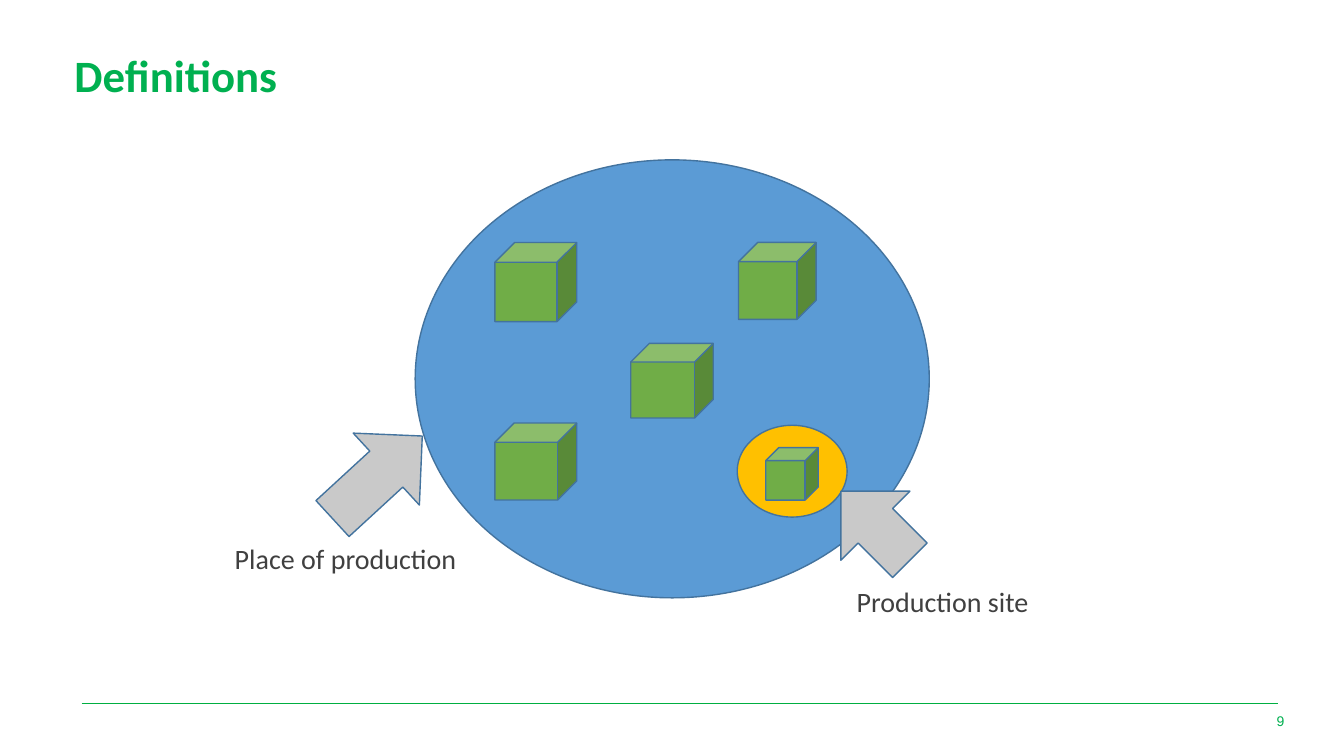
from dataclasses import dataclass

from lxml import etree
from pptx import Presentation
from pptx.dml.color import RGBColor
from pptx.enum.shapes import MSO_CONNECTOR, MSO_SHAPE
from pptx.enum.text import MSO_ANCHOR, PP_ALIGN
from pptx.oxml.ns import qn
from pptx.slide import Slide
from pptx.util import Pt

OVAL, CUBE, ARROW = MSO_SHAPE.OVAL, MSO_SHAPE.CUBE, MSO_SHAPE.UP_ARROW
STRAIGHT = MSO_CONNECTOR.STRAIGHT
TOP, MIDDLE = MSO_ANCHOR.TOP, MSO_ANCHOR.MIDDLE
LEFT, RIGHT = PP_ALIGN.LEFT, PP_ALIGN.RIGHT

BLUE, ORANGE, GREEN, GREY = "5B9BD5", "FFC000", "70AD47", "C9C9C9"
OUTLINE, RULE, ACCENT, DARK = "43739E", "00AF41", "00B050", "404040"


@dataclass
class Figure:
    kind: MSO_SHAPE
    x: float
    y: float
    w: float
    h: float
    fill: str
    rotation: float = 0


@dataclass
class Label:
    text: str
    x: float
    y: float
    w: float
    h: float
    size: float
    color: str
    font: str = "Calibri"
    bold: bool = False
    align: PP_ALIGN = LEFT
    anchor: MSO_ANCHOR = TOP
    spacing: float = 1.0


FIGURES = [
    Figure(OVAL, 296.6, 114.2, 367.2, 312.8, BLUE),
    Figure(OVAL, 526.6, 303.8, 78.5, 65.6, ORANGE),
    Figure(CUBE, 353.5, 173.2, 58.5, 56.5, GREEN),
    Figure(CUBE, 527.5, 173.2, 55.5, 55, GREEN),
    Figure(CUBE, 450.5, 245.3, 59, 53.3, GREEN),
    Figure(CUBE, 353.5, 302.2, 58.5, 55, GREEN),
    Figure(CUBE, 547, 319.7, 37.5, 37.5, GREEN),
    Figure(ARROW, 234.7, 297.4, 69.8, 87.1, GREY, 47.4),
    Figure(ARROW, 590.4, 340.6, 69.8, 69.8, GREY, 315),
]

LABELS = [
    Label("Definitions", 46.1, 36.7, 867.6, 38.2, 32, ACCENT,
          bold=True, anchor=MIDDLE, spacing=0.9),
    Label("9", 881.3, 500.4, 43.2, 28.8, 10, ACCENT,
          font="Arial", align=RIGHT, anchor=MIDDLE),
    Label("Place of production", 160.6, 383, 189.4, 31.7, 20, DARK),
    Label("Production site", 604.8, 414, 146.9, 31.7, 20, DARK),
]


def rgb(value: str) -> RGBColor:
    return RGBColor.from_string(value)


def draw_figure(s: Slide, fig: Figure) -> None:
    sp = s.shapes.add_shape(fig.kind, Pt(fig.x), Pt(fig.y), Pt(fig.w), Pt(fig.h))
    sp.shadow.inherit = False
    sp.rotation = fig.rotation
    sp.fill.solid()
    sp.fill.fore_color.rgb = rgb(fig.fill)
    sp.line.color.rgb = rgb(OUTLINE)
    sp.line.width = Pt(1)


def draw_label(s: Slide, label: Label) -> None:
    sp = s.shapes.add_textbox(Pt(label.x), Pt(label.y), Pt(label.w), Pt(label.h))
    tf = sp.text_frame
    tf.word_wrap = True
    tf.vertical_anchor = label.anchor
    tf.text = label.text
    p = tf.paragraphs[0]
    p.alignment = label.align
    p.line_spacing = label.spacing
    font = p.runs[0].font
    font.name = label.font
    font.size = Pt(label.size)
    font.bold = label.bold
    font.color.rgb = rgb(label.color)


def draw_footer_rule(s: Slide) -> None:
    line = s.shapes.add_connector(STRAIGHT, Pt(58.3), Pt(502.6), Pt(913), Pt(502.6))
    line.line.color.rgb = rgb(RULE)
    line.line.width = Pt(0.5)
    etree.SubElement(line._element.spPr, qn("a:effectLst"))


def main() -> None:
    prs = Presentation()
    prs.slide_width, prs.slide_height = Pt(960), Pt(540)
    s = prs.slides.add_slide(prs.slide_layouts[6])
    draw_footer_rule(s)
    for fig in FIGURES:
        draw_figure(s, fig)
    for label in LABELS:
        draw_label(s, label)
    prs.save("out.pptx")


if __name__ == "__main__":
    main()
